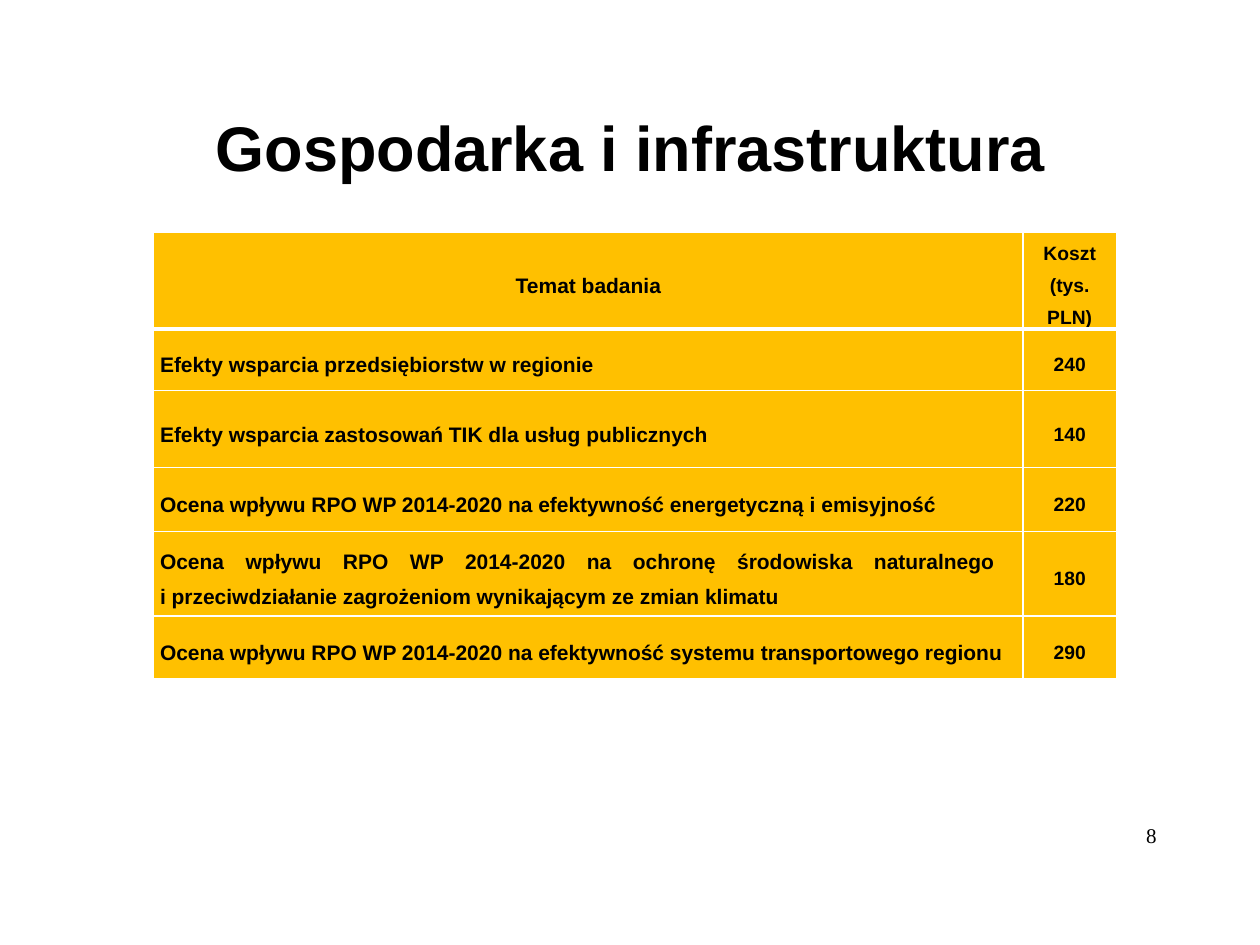
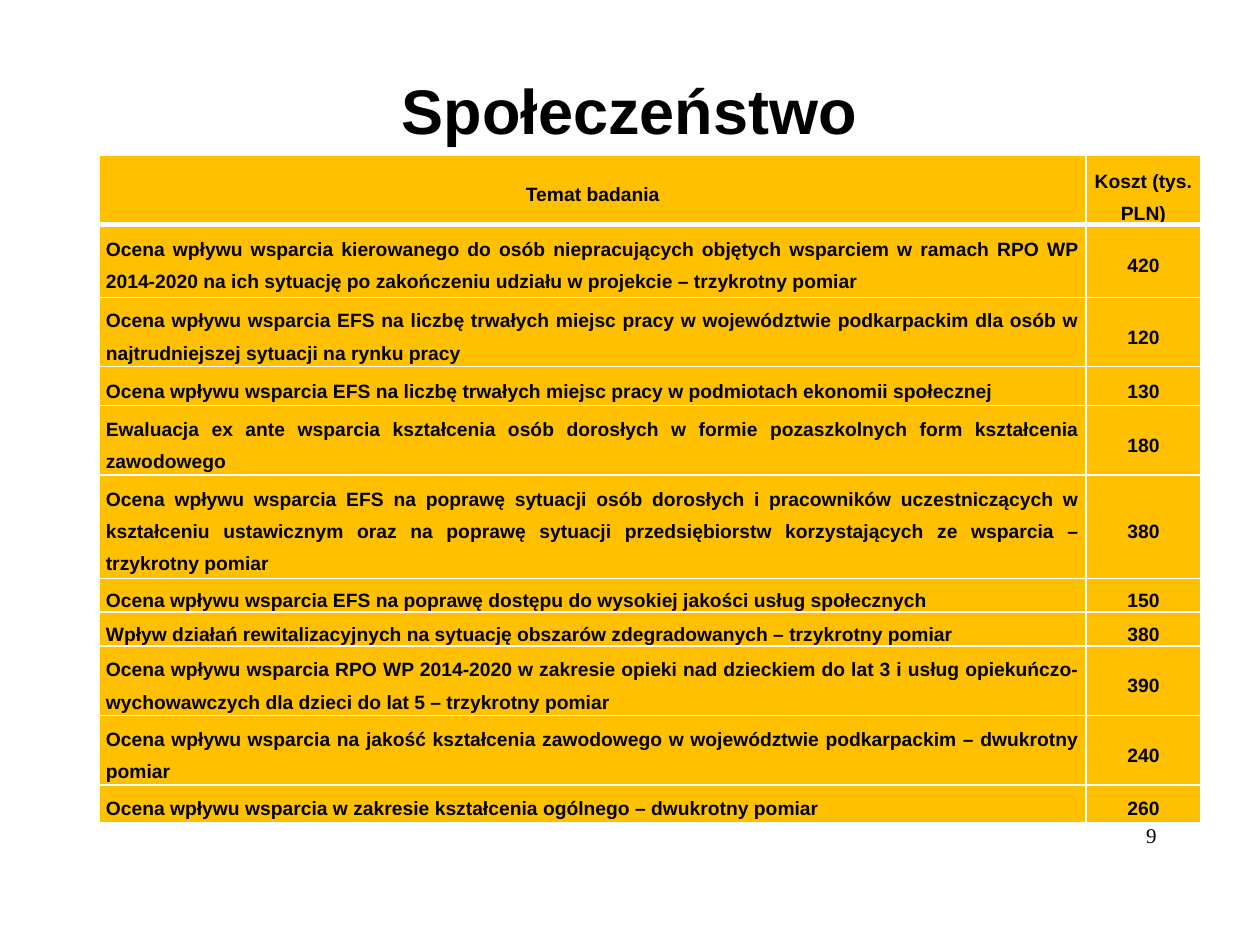
from lxml import etree
from pptx import Presentation
from pptx import util as u
from pptx.dml.color import RGBColor
from pptx.enum import text
from pptx.oxml.ns import qn

COLOURS = {"text": "000000", "cell": "FFC000", "border": "FFFFFF"}
HEADING_FONT = "Arial"
NUMBER_FONT = "Times New Roman"
TITLE_ONLY_LAYOUT = 5
NUMBER_BOX = (7.02, 6.54, 2.16, 0.46)
HEADER = ("Temat badania", "Koszt (tys. PLN)")

SLIDES = [
    {
        "title": "Gospodarka i infrastruktura",
        "number": "8",
        "title_box": (0.81, 0.76, 8.39, 0.87),
        "table_box": (1.22, 1.84, 7.64, 3.56),
        "columns": (6.9, 0.74),
        "rows": (0.77, 0.49, 0.61, 0.51, 0.67, 0.5),
        "topic_size": 12,
        "studies": [
            ("Efekty wsparcia przedsiębiorstw w regionie", 240),
            ("Efekty wsparcia zastosowań TIK dla usług publicznych ", 140),
            ("Ocena wpływu RPO WP 2014-2020 na efektywność energetyczną i emisyjność", 220),
            ("Ocena wpływu RPO WP 2014-2020 na ochronę środowiska naturalnego \v"
             "i przeciwdziałanie zagrożeniom wynikającym ze zmian klimatu", 180),
            ("Ocena wpływu RPO WP 2014-2020 na efektywność systemu transportowego regionu", 290),
        ],
    },
    {
        "title": "Społeczeństwo",
        "number": "9",
        "title_box": (0.8, 0.57, 8.39, 0.66),
        "table_box": (0.79, 1.23, 8.74, 5.31),
        "columns": (7.83, 0.91),
        "rows": (0.55, 0.58, 0.55, 0.31, 0.55, 0.82, 0.27, 0.27, 0.55, 0.55, 0.3),
        "topic_size": 11,
        "studies": [
            ("Ocena wpływu wsparcia kierowanego do osób niepracujących objętych wsparciem "
             "w ramach RPO WP 2014-2020 na ich sytuację po zakończeniu udziału w projekcie "
             "– trzykrotny pomiar", 420),
            ("Ocena wpływu wsparcia EFS na liczbę trwałych miejsc pracy w województwie "
             "podkarpackim dla osób w najtrudniejszej sytuacji na rynku pracy ", 120),
            ("Ocena wpływu wsparcia EFS na liczbę trwałych miejsc pracy w podmiotach "
             "ekonomii społecznej ", 130),
            ("Ewaluacja ex ante wsparcia kształcenia osób dorosłych w formie pozaszkolnych "
             "form kształcenia zawodowego", 180),
            ("Ocena wpływu wsparcia EFS na poprawę sytuacji osób dorosłych i pracowników "
             "uczestniczących w kształceniu ustawicznym oraz na poprawę sytuacji "
             "przedsiębiorstw korzystających ze wsparcia – trzykrotny pomiar", 380),
            ("Ocena wpływu wsparcia EFS na poprawę dostępu do wysokiej jakości usług "
             "społecznych", 150),
            ("Wpływ działań rewitalizacyjnych na sytuację obszarów zdegradowanych "
             "– trzykrotny pomiar", 380),
            ("Ocena wpływu wsparcia RPO WP 2014-2020 w zakresie opieki nad dzieckiem do lat 3 "
             "i usług opiekuńczo-wychowawczych dla dzieci do lat 5 – trzykrotny pomiar", 390),
            ("Ocena wpływu wsparcia na jakość kształcenia zawodowego w województwie "
             "podkarpackim – dwukrotny pomiar", 240),
            ("Ocena wpływu wsparcia w zakresie kształcenia ogólnego – dwukrotny pomiar", 260),
        ],
    },
]


def inches(box):
    return [u.Inches(length) for length in box]


def write(text_frame, wording, size, alignment, spacing, font=HEADING_FONT, bold=True):
    paragraph = text_frame.paragraphs[0]
    paragraph.text = wording
    paragraph.alignment = alignment
    paragraph.line_spacing = spacing
    for run in paragraph.runs:
        run.font.name = font
        run.font.size = u.Pt(size)
        run.font.bold = bold
        run.font.color.rgb = RGBColor.from_string(COLOURS["text"])


def clear_margins(text_frame):
    text_frame.margin_left = text_frame.margin_right = 0
    text_frame.margin_top = text_frame.margin_bottom = 0
    text_frame.word_wrap = True
    text_frame.auto_size = text.MSO_AUTO_SIZE.NONE


def add_title(slide, wording, box):
    title = slide.shapes.title
    title.left, title.top, title.width, title.height = inches(box)
    clear_margins(title.text_frame)
    title.text_frame.vertical_anchor = text.MSO_ANCHOR.MIDDLE
    write(title.text_frame, wording, 36, text.PP_ALIGN.CENTER, 0.93)


def add_slide_number(slide, number, box):
    text_frame = slide.shapes.add_textbox(*inches(box)).text_frame
    clear_margins(text_frame)
    write(text_frame, number, 12, text.PP_ALIGN.RIGHT, 0.95, NUMBER_FONT, bold=False)


def draw_borders(cell, top, bottom):
    """Outline a cell; top and bottom are line widths in points."""
    properties = cell._tc.get_or_add_tcPr()
    for side, width in (("L", 1), ("R", 1), ("T", top), ("B", bottom)):
        line = etree.SubElement(properties, qn(f"a:ln{side}"), w=str(u.Pt(width)))
        fill = etree.SubElement(line, qn("a:solidFill"))
        etree.SubElement(fill, qn("a:srgbClr"), val=COLOURS["border"])


def format_cell(cell, row, column):
    cell.margin_left = cell.margin_right = u.Inches(0.05)
    cell.margin_top = cell.margin_bottom = 0
    is_cost_header = row == 0 and column == 1
    cell.vertical_anchor = text.MSO_ANCHOR.BOTTOM if is_cost_header else text.MSO_ANCHOR.MIDDLE
    draw_borders(cell, top=3 if row == 1 else 1, bottom=3 if row == 0 else 1)
    cell.fill.solid()
    cell.fill.fore_color.rgb = RGBColor.from_string(COLOURS["cell"])


def add_study_table(slide, content):
    records = [HEADER, *content["studies"]]
    table = slide.shapes.add_table(len(records), len(HEADER), *inches(content["table_box"])).table
    table.horz_banding = False
    for column, width in zip(table.columns, content["columns"]):
        column.width = u.Inches(width)
    for row, height in zip(table.rows, content["rows"]):
        row.height = u.Inches(height)
    for row, record in enumerate(records):
        for column, value in enumerate(record):
            cell = table.cell(row, column)
            format_cell(cell, row, column)
            is_topic = row > 0 and column == 0
            alignment = text.PP_ALIGN.JUSTIFY if is_topic else text.PP_ALIGN.CENTER
            size = content["topic_size"] if column == 0 else 11
            write(cell.text_frame, str(value), size, alignment, 1.5)


def add_study_slide(presentation, content):
    slide = presentation.slides.add_slide(presentation.slide_layouts[TITLE_ONLY_LAYOUT])
    add_title(slide, content["title"], content["title_box"])
    add_study_table(slide, content)
    add_slide_number(slide, content["number"], NUMBER_BOX)


def main():
    presentation = Presentation()
    presentation.slide_width = u.Inches(10)
    presentation.slide_height = u.Inches(7.5)
    for content in SLIDES:
        add_study_slide(presentation, content)
    presentation.save("out.pptx")


if __name__ == "__main__":
    main()
